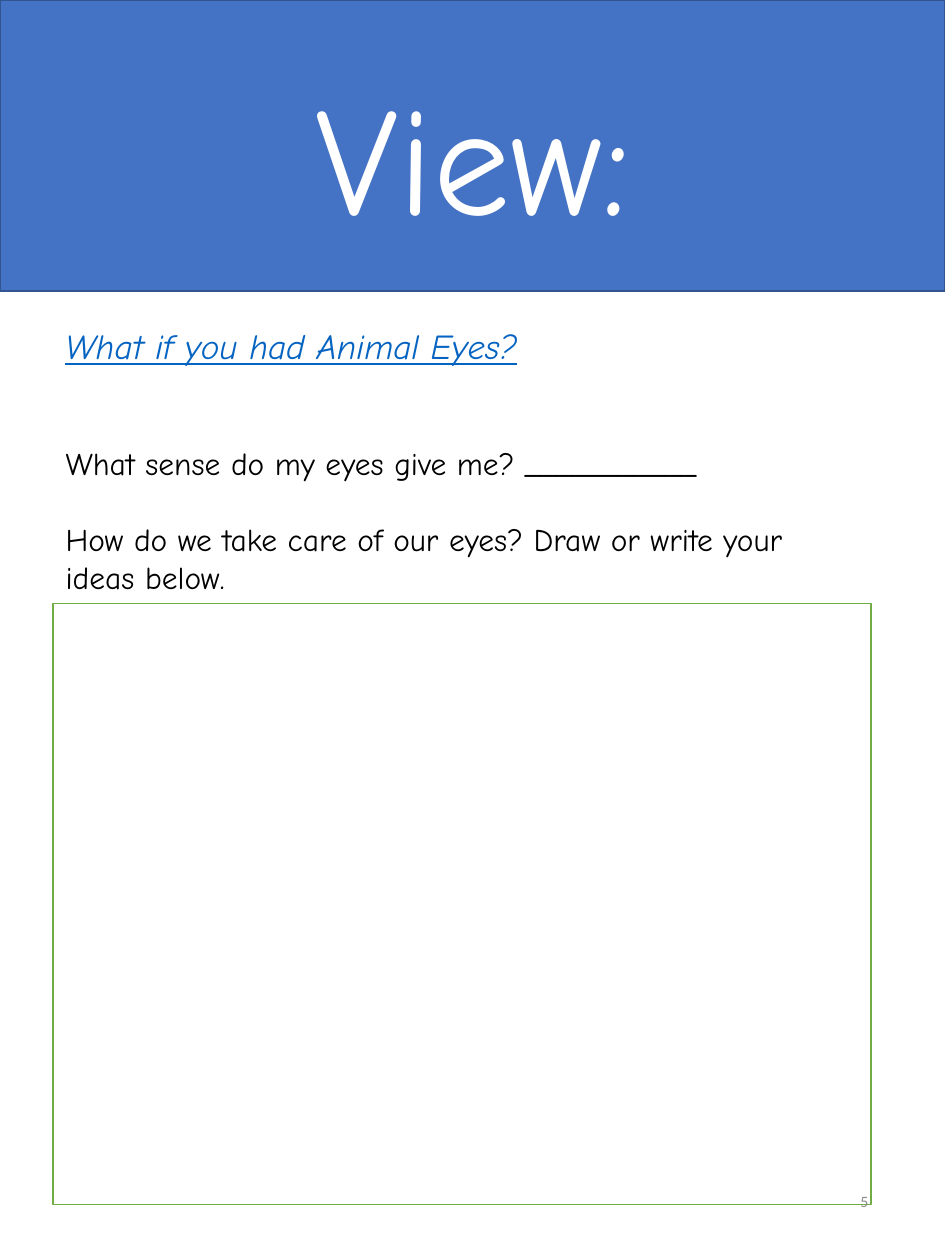
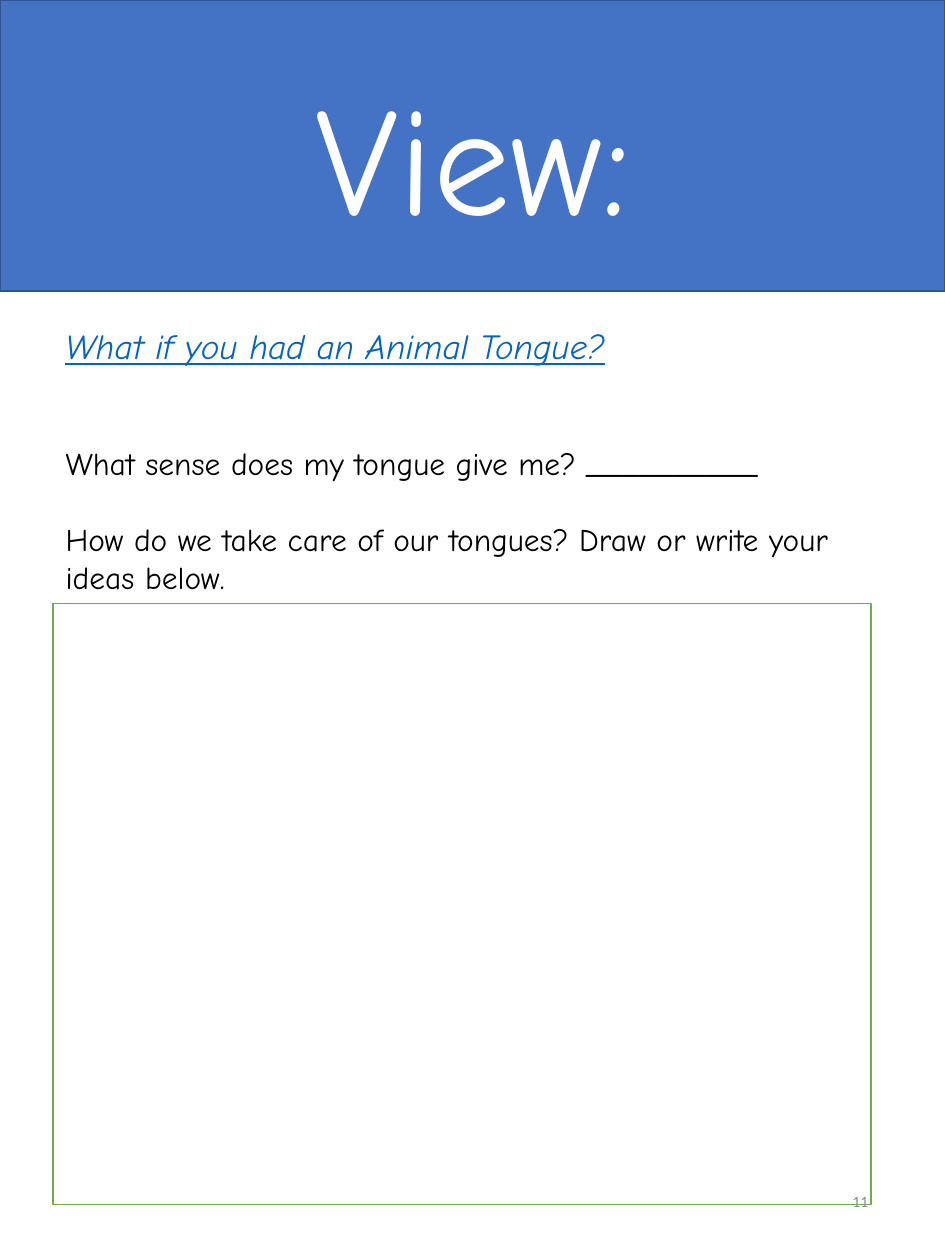
from pptx import Presentation
from pptx.dml import color
from pptx.enum import shapes, text
from pptx.oxml import xmlchemy
from pptx import util as u

Pt = u.Pt
FONT = "Comic Neue"
BLUE, NAVY, GREEN = "4472C4", "325491", "70AD47"
WHITE, BLACK, LINK, GREY = "FFFFFF", "000000", "0563C1", "8C8C8C"
WIDE, HIGH, LEFT = 540, 720, 30.24
BLANK = "_" * 11
PAGES = [
    {"no": "5", "book": "What if you had Animal Eyes?",
     "asks": [f"What sense do my eyes give me? {BLANK}",
              "How do we take care of our eyes? Draw or write your ideas below."]},
    {"no": "11", "book": "What if you had an Animal Tongue?",
     "asks": [f"What sense does my tongue give me? {BLANK}",
              "How do we take care of our tongues? Draw or write your ideas below."]},
]


def rgb(code):
    """Turn a hex string into a colour."""
    return color.RGBColor.from_string(code)


def place(shape, box):
    """Move and size a shape in points."""
    shape.left, shape.top, shape.width, shape.height = map(Pt, box)


def write(shape, lines, size, ink, font=FONT, side="LEFT", anchor="TOP", gap=0, link=False):
    """Fill a shape with formatted paragraphs."""
    frame = shape.text_frame
    frame.text = "\n".join(lines)
    frame.word_wrap = True
    frame.auto_size = text.MSO_AUTO_SIZE.NONE
    frame.vertical_anchor = getattr(text.MSO_ANCHOR, anchor)
    for rank, para in enumerate(frame.paragraphs):
        para.alignment = getattr(text.PP_ALIGN, side)
        para.line_spacing = 1.0
        para.space_before = Pt(gap if rank else 0)
        props = para._p.get_or_add_pPr()
        props.set("marL", "0")
        props.set("indent", "0")
        props.append(xmlchemy.OxmlElement("a:buNone"))
        face = para.runs[0].font
        face.name, face.size, face.color.rgb = font, Pt(size), rgb(ink)
        face.italic = face.underline = link


def block(slide, box, fill, line):
    """Draw a filled rectangle with a thin outline."""
    shape = slide.shapes.add_shape(shapes.MSO_SHAPE.RECTANGLE, *map(Pt, box))
    shape.shadow.inherit = False
    shape.fill.solid()
    shape.fill.fore_color.rgb = rgb(fill)
    shape.line.color.rgb = rgb(line)
    shape.line.width = Pt(1)
    return shape


def label(slide, box, words, size, ink, **style):
    """Add a text box with one paragraph."""
    write(slide.shapes.add_textbox(*map(Pt, box)), [words], size, ink, **style)


def build(deck, page):
    """Lay out one worksheet page."""
    slide = deck.slides.add_slide(deck.slide_layouts[1])
    title, body = slide.placeholders
    band = block(slide, (0, 0, WIDE, 166.32), BLUE, NAVY)
    title._element.addprevious(band._element)
    place(title, (17.28, 31.68, 506.16, 113.76))
    write(title, ["View:"], 88, WHITE, side="CENTER")
    label(slide, (LEFT, 182.16, 451.44, 31.68), page["book"], 20, LINK, link=True)
    place(body, (LEFT, 249.84, 467.28, 94.32))
    write(body, page["asks"], 18, BLACK, gap=22)
    block(slide, (LEFT, 344.88, 467.28, 343.44), WHITE, GREEN)
    label(slide, (381.6, 667.44, 121.68, 38.16), page["no"], 9, GREY,
          font="Calibri", side="RIGHT", anchor="MIDDLE")


def main():
    """Build and save the deck."""
    deck = Presentation()
    deck.slide_width, deck.slide_height = Pt(WIDE), Pt(HIGH)
    for page in PAGES:
        build(deck, page)
    deck.save("out.pptx")


if __name__ == "__main__":
    main()
